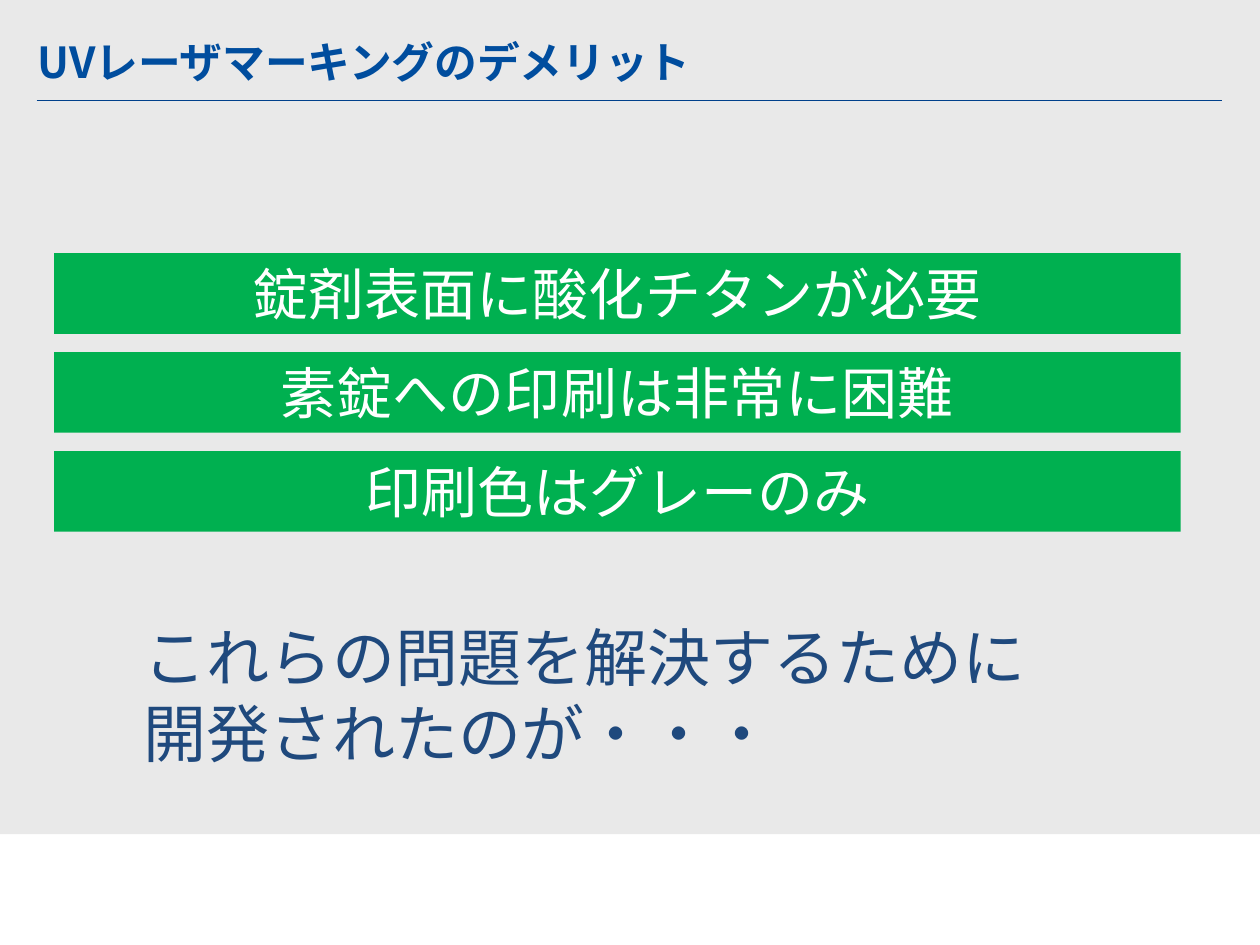
import pptx
import pptx.dml.color
import pptx.enum.shapes
import pptx.enum.text
import pptx.oxml
import pptx.oxml.ns
import pptx.util
from dataclasses import dataclass


@dataclass(frozen=True)
class Theme:
    font: str = "Noto Sans CJK JP"
    panel: str = "D9D9D9"
    panel_opacity: int = 57
    rule: str = "00408B"
    title: str = "004D9E"
    bar: str = "00B050"
    bar_text: str = "FFFFFF"
    closing: str = "1F497D"
    title_size: float = 24.4
    bar_size: float = 32
    closing_size: float = 36


theme = Theme()
color = pptx.dml.color.RGBColor.from_string
inches = pptx.util.Inches
qn = pptx.oxml.ns.qn


def add_block(left, top, width, height, fill):
    """Add a plain rectangle with a solid fill and neither line nor shadow."""
    block = page.shapes.add_shape(
        pptx.enum.shapes.MSO_SHAPE.RECTANGLE,
        inches(left), inches(top), inches(width), inches(height))
    block.shadow.inherit = False
    block.fill.solid()
    block.fill.fore_color.rgb = color(fill)
    block.line.fill.background()
    return block


def write(box, text, size, text_color, align, anchor, bold=False):
    """Fill a box with one paragraph, using the theme font for both scripts."""
    frame = box.text_frame
    frame.word_wrap = True
    frame.vertical_anchor = anchor
    para = frame.paragraphs[0]
    para.text = text
    para.alignment = align
    para.font.name = theme.font
    para.font.size = pptx.util.Pt(size)
    para.font.bold = bold
    para.font.color.rgb = color(text_color)
    properties = para._p.pPr.find(qn("a:defRPr"))
    pptx.oxml.ns  # namespace helpers
    east_asian = properties.makeelement(qn("a:ea"), {"typeface": theme.font})
    properties.find(qn("a:latin")).addnext(east_asian)


LEFT = pptx.enum.text.PP_ALIGN.LEFT
CENTER = pptx.enum.text.PP_ALIGN.CENTER
TOP = pptx.enum.text.MSO_ANCHOR.TOP
MIDDLE = pptx.enum.text.MSO_ANCHOR.MIDDLE

deck = pptx.Presentation()
deck.slide_width, deck.slide_height = inches(10), inches(7.5)
page = deck.slides.add_slide(deck.slide_layouts[6])

# Translucent panel and the rule under the title
panel = add_block(0, 0, 10, 6.62, theme.panel)
panel_color = panel._element.spPr.find(qn("a:solidFill"))[0]
panel_color.append(panel_color.makeelement(
    qn("a:alpha"), {"val": str(theme.panel_opacity * 1000)}))

rule = page.shapes.add_connector(
    pptx.enum.shapes.MSO_CONNECTOR.STRAIGHT,
    inches(0.29), inches(0.8), inches(9.7), inches(0.8))
rule.line.color.rgb = color(theme.rule)
rule.line.width = pptx.util.Pt(0.75)
rule_properties = rule._element.spPr
rule_properties.append(rule_properties.makeelement(qn("a:effectLst"), {}))

# Drawbacks, one bar each
bar_top, bar_pitch = 2.01, 0.785
drawbacks = ["錠剤表面に酸化チタンが必要", "素錠への印刷は非常に困難", "印刷色はグレーのみ"]
for row, drawback in enumerate(drawbacks):
    bar = add_block(0.43, bar_top + row * bar_pitch, 8.94, 0.64, theme.bar)
    write(bar, drawback, theme.bar_size, theme.bar_text, CENTER, MIDDLE)

closing = page.shapes.add_textbox(inches(1.04), inches(4.86), inches(7.5), inches(1.14))
write(closing, "これらの問題を解決するために開発されたのが・・・",
      theme.closing_size, theme.closing, LEFT, TOP)

title = page.shapes.add_textbox(inches(0.2), inches(0.24), inches(9.17), inches(0.5))
write(title, "UVレーザマーキングのデメリット",
      theme.title_size, theme.title, LEFT, MIDDLE, bold=True)

deck.save("out.pptx")
